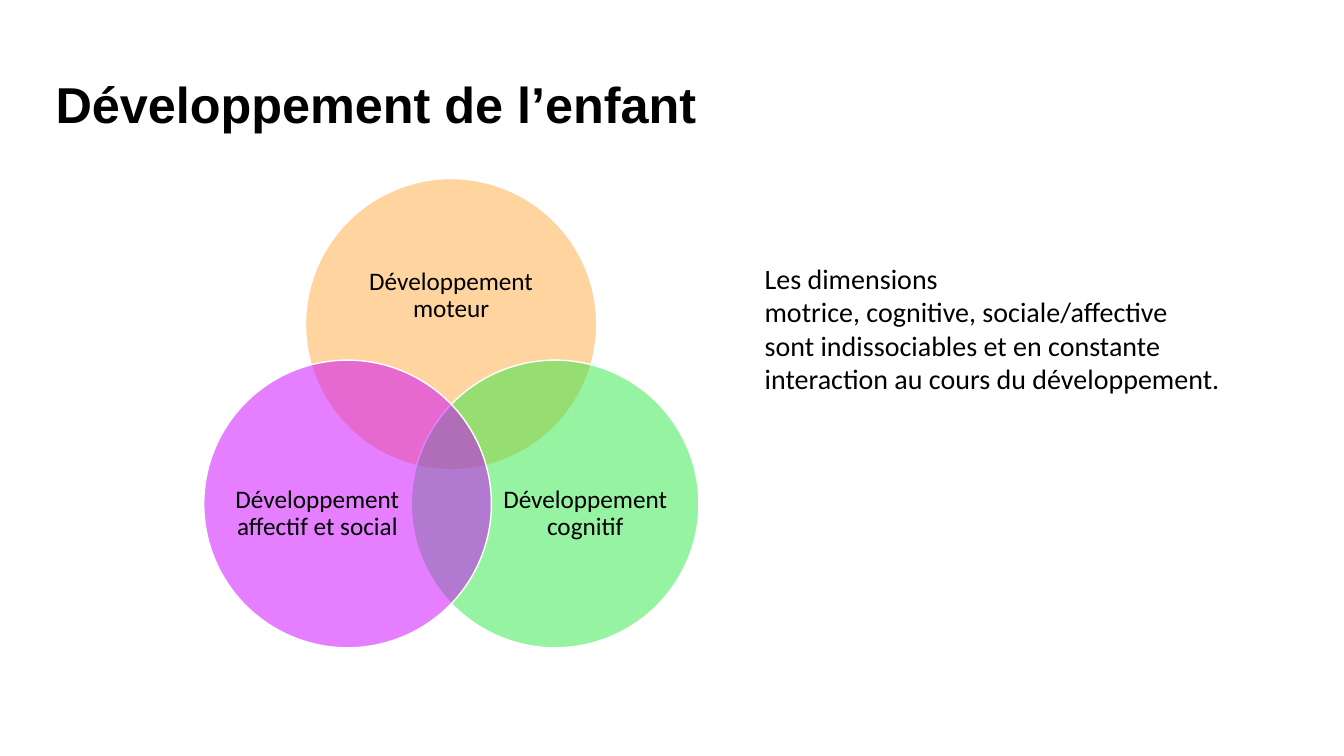
from lxml import etree
from pptx import Presentation
from pptx.dml.color import RGBColor
from pptx.enum.shapes import MSO_SHAPE
from pptx.enum.text import MSO_ANCHOR, PP_ALIGN
from pptx.oxml.ns import qn
from pptx.util import Cm, Pt

OVAL = MSO_SHAPE.OVAL
TOP, MIDDLE = MSO_ANCHOR.TOP, MSO_ANCHOR.MIDDLE
LEFT, CENTER = PP_ALIGN.LEFT, PP_ALIGN.CENTER

# Content
TITLE = "Développement de l’enfant"
# label, fill, centre x and y, diameter, label shift right and down (cm)
CIRCLES = [
    ("Développement\vmoteur", "orange", 11.37, 8.17, 7.34, 0, -0.72),
    ("Développement\vcognitif", "green", 13.99, 12.7, 7.25, 0.76, 0.24),
    ("Développement\vaffectif et social", "purple", 8.76, 12.7, 7.25, -0.76, 0.24),
]
STATEMENT = [
    "Les dimensions \vmotrice, cognitive, sociale/affective",
    "sont indissociables et en constante interaction au cours du développement.",
]

THEME = {
    "text": "000000", "outline": "FFFFFF",
    "orange": "FFAB40", "green": "2EE844", "purple": "CC00FF",
    "opacity": 50, "outline_width": 1,
    "title_font": "Arial", "body_font": "Calibri",
    "title_size": 36, "label_size": 18, "body_size": 20,
}


def color(name):
    return RGBColor.from_string(THEME[name])


def write(shape, paragraphs, *, size, font="body_font", bold=False, align=LEFT,
          anchor=TOP, spacing=1.0, wrap=True, margins=(0.25, 0.13, 0.25, 0.13)):
    frame = shape.text_frame
    frame.word_wrap = wrap
    frame.vertical_anchor = anchor
    (frame.margin_left, frame.margin_top,
     frame.margin_right, frame.margin_bottom) = map(Cm, margins)
    frame.text = "\n".join(paragraphs)
    for paragraph in frame.paragraphs:
        paragraph.alignment = align
        paragraph.line_spacing = spacing
        for run in paragraph.runs:
            run.font.name = THEME[font]
            run.font.size = Pt(THEME[size])
            run.font.bold = bold
            run.font.color.rgb = color("text")


def add_circle(slide, label, fill, x, y, diameter, right, down):
    shape = slide.shapes.add_shape(
        OVAL, Cm(x - diameter / 2), Cm(y - diameter / 2), Cm(diameter), Cm(diameter))
    shape.shadow.inherit = False
    shape.fill.solid()
    shape.fill.fore_color.rgb = color(fill)
    fill_color = shape.fill._xPr.find(qn("a:solidFill"))[0]
    etree.SubElement(fill_color, qn("a:alpha"), val=str(THEME["opacity"] * 1000))
    shape.line.color.rgb = color("outline")
    shape.line.width = Pt(THEME["outline_width"])
    # A margin on one side moves the centred label by half its size
    margins = [max(0, 2 * shift) for shift in (right, down, -right, -down)]
    write(shape, [label], size="label_size", align=CENTER, anchor=MIDDLE,
          spacing=0.9, wrap=False, margins=margins)


def main():
    presentation = Presentation()
    presentation.slide_width, presentation.slide_height = Cm(33.87), Cm(19.05)
    slide = presentation.slides.add_slide(presentation.slide_layouts[6])

    # Title
    title = slide.shapes.add_textbox(Cm(1.15), Cm(1.65), Cm(31.55), Cm(2.1))
    write(title, [TITLE], size="title_size", font="title_font", bold=True,
          anchor=MIDDLE, spacing=0.9)

    # Overlapping circles
    for circle in CIRCLES:
        add_circle(slide, *circle)

    # Statement
    statement = slide.shapes.add_textbox(Cm(19.02), Cm(6.45), Cm(13.34), Cm(3.68))
    write(statement, STATEMENT, size="body_size")

    presentation.save("out.pptx")


if __name__ == "__main__":
    main()
